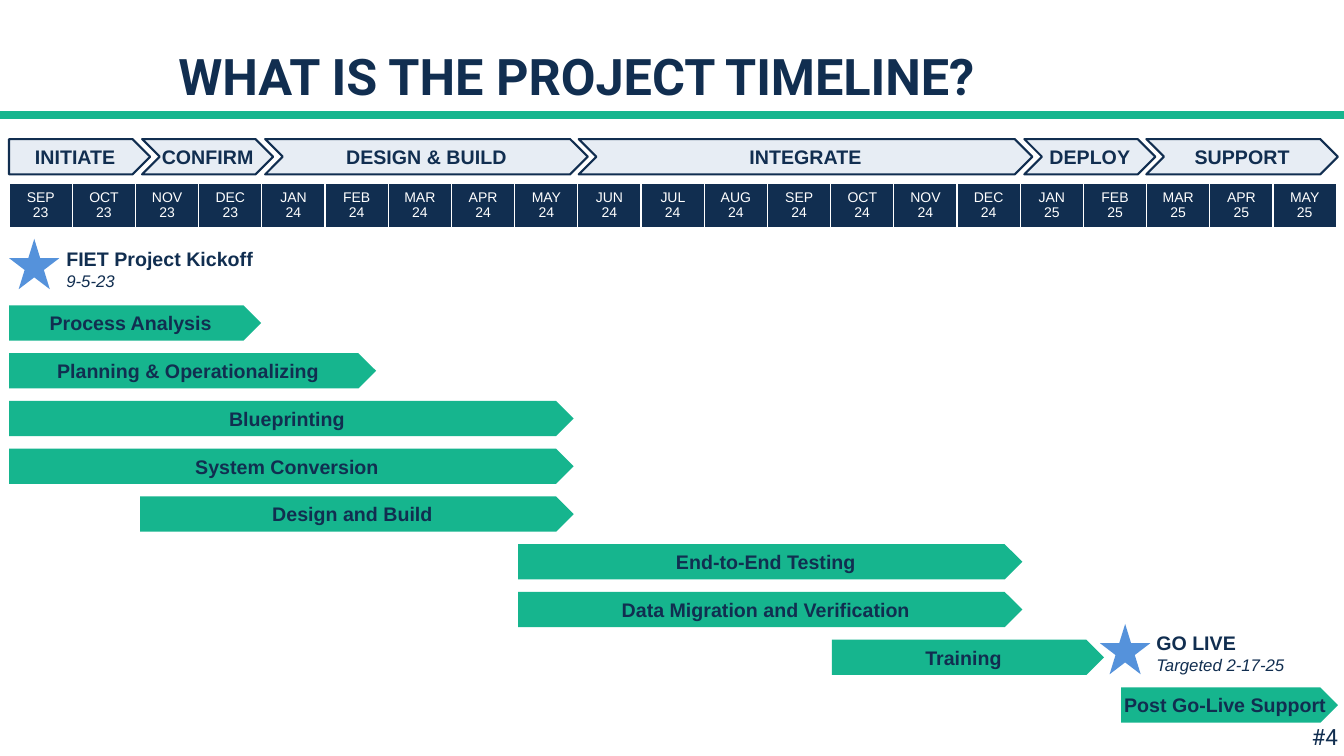
from lxml import etree
from pptx import Presentation
from pptx import util as u
from pptx.dml.color import RGBColor
from pptx.enum import shapes, text
from pptx.oxml import ns

NAVY = RGBColor(0x11, 0x2E, 0x50)
GREEN = RGBColor(0x16, 0xB5, 0x8E)
BLUE = RGBColor(0x55, 0x92, 0xDB)
PALE = RGBColor(0xE7, 0xED, 0xF4)
WHITE = RGBColor(0xFF, 0xFF, 0xFF)

SHAPE = shapes.MSO_SHAPE
ALIGN = text.PP_ALIGN
ANCHOR = text.MSO_ANCHOR

LEFT = 0.09
BAR_H = 0.35
PHASE_TOP = 1.38
TASK_TOP, TASK_PITCH = 3.03, 3.79 / 8
MONTH_W, MONTH_H = 0.63, 0.43

PHASES = [  # name, left, width
    ("INITIATE", LEFT, 1.4),
    ("CONFIRM", 1.41, 1.3),
    ("DESIGN & BUILD", 2.63, 3.2),
    ("INTEGRATE", 5.74, 4.5),
    ("DEPLOY", 10.16, 1.3),
    ("SUPPORT", 11.37, 1.9),
]
TASKS = [  # name, left, width
    ("Process Analysis", LEFT, 2.5),
    ("Planning & Operationalizing", LEFT, 3.64),
    ("Blueprinting", LEFT, 5.6),
    ("System Conversion", LEFT, 5.6),
    ("Design and Build", 1.39, 4.3),
    ("End-to-End Testing", 5.14, 5),
    ("Data Migration and Verification", 5.14, 5),
    ("Training", 8.25, 2.7),
    ("Post Go-Live Support", 11.12, 2.15),
]
MONTH_NAMES = "JAN FEB MAR APR MAY JUN JUL AUG SEP OCT NOV DEC".split()
FIRST_MONTH, MONTH_COUNT = 8, 21
MONTHS = [f"{MONTH_NAMES[m % 12]} {23 + m // 12}"
          for m in range(FIRST_MONTH, FIRST_MONTH + MONTH_COUNT)]


class Timeline:
    def __init__(self, slide, font="Arial", heading_font="Roboto"):
        self.s = slide
        self.font = font
        self.heading_font = heading_font

    def format(self, p, size, color=NAVY, bold=False, italic=False, font=None, align=ALIGN.CENTER):
        p.alignment = align
        for r in p.runs:
            f = r.font
            f.name, f.size = font or self.font, u.Pt(size)
            f.bold, f.italic = bold, italic
            f.color.rgb = color

    def shape(self, kind, x, y, w, h, fill, outline=None):
        sp = self.s.shapes.add_shape(kind, u.Inches(x), u.Inches(y), u.Inches(w), u.Inches(h))
        sp.shadow.inherit = False
        sp.fill.solid()
        sp.fill.fore_color.rgb = fill
        if outline is None:
            sp.line.fill.background()
        else:
            sp.line.color.rgb = outline
            sp.line.width = u.Pt(1.5)
        return sp

    def arrow(self, kind, label, x, y, w, fill, outline=None):
        tf = self.shape(kind, x, y, w, BAR_H, fill, outline).text_frame
        tf.text = label
        tf.word_wrap = False
        tf.vertical_anchor = ANCHOR.MIDDLE
        self.format(tf.paragraphs[0], 14, bold=True)

    def milestone(self, name, date, star_at, label_at, label_size):
        """Draw a caption of two lines and the star beside it."""
        tf = self.shape(SHAPE.RECTANGLE, *label_at, *label_size, WHITE).text_frame
        tf.text = f"{name}\n{date}"
        tf.word_wrap = True
        tf.vertical_anchor = ANCHOR.MIDDLE
        title, subtitle = tf.paragraphs
        self.format(title, 14, bold=True, align=ALIGN.LEFT)
        self.format(subtitle, 12, italic=True, align=ALIGN.LEFT)
        self.shape(SHAPE.STAR_5_POINT, *star_at, 0.5, 0.5, BLUE)

    def textbox(self, label, x, y, w, h, size, bold=False, align=ALIGN.CENTER, anchor=ANCHOR.TOP):
        sp = self.s.shapes.add_textbox(u.Inches(x), u.Inches(y), u.Inches(w), u.Inches(h))
        tf = sp.text_frame
        tf.text = label
        tf.word_wrap = True
        tf.vertical_anchor = anchor
        p = tf.paragraphs[0]
        self.format(p, size, bold=bold, font=self.heading_font, align=align)
        return p

    def rule(self, y, width):
        line = self.s.shapes.add_connector(
            shapes.MSO_CONNECTOR.STRAIGHT, 0, u.Inches(y), u.Inches(width), u.Inches(y))
        line.line.color.rgb = GREEN
        line.line.width = u.Pt(6)
        etree.SubElement(line._element.spPr, ns.qn("a:effectLst"))

    def month_row(self, months, x, y):
        table = self.s.shapes.add_table(
            1, len(months), u.Inches(x), u.Inches(y),
            u.Inches(MONTH_W * len(months)), u.Inches(MONTH_H)).table
        table.first_row = table.horz_banding = False
        for column, cell, month in zip(table.columns, table.rows[0].cells, months):
            column.width = u.Inches(13.17 / len(months))
            cell.text = month
            cell.vertical_anchor = ANCHOR.MIDDLE
            self.format(cell.text_frame.paragraphs[0], 10, WHITE)
            self.cell_borders(cell)
            cell.fill.solid()
            cell.fill.fore_color.rgb = NAVY

    def cell_borders(self, cell):
        tc_pr = cell._tc.get_or_add_tcPr()
        for side in ("lnL", "lnR", "lnT"):
            ln = etree.SubElement(tc_pr, ns.qn(f"a:{side}"), w=str(u.Pt(1)))
            fill = etree.SubElement(ln, ns.qn("a:solidFill"))
            etree.SubElement(fill, ns.qn("a:srgbClr"), val=str(WHITE))


def main():
    prs = Presentation()
    prs.slide_width, prs.slide_height = u.Inches(13.33), u.Inches(7.5)
    timeline = Timeline(prs.slides.add_slide(prs.slide_layouts[6]))

    timeline.rule(1.14, 13.33)
    title = timeline.textbox("WHAT IS THE PROJECT TIMELINE?", 1.67, 0.35, 10, 0.76, 36,
                             bold=True, align=ALIGN.LEFT, anchor=ANCHOR.BOTTOM)
    title.line_spacing = 0.9

    timeline.milestone("FIET Project Kickoff", "9-5-23", (LEFT, 2.37), (0.56, 2.4), (2.2, 0.53))
    timeline.milestone("GO LIVE", "Targeted 2-17-25", (10.91, 6.19), (11.37, 6.23), (1.7, 0.5))

    for i, (name, x, w) in enumerate(PHASES):
        kind = SHAPE.CHEVRON if i else SHAPE.PENTAGON
        timeline.arrow(kind, name, x, PHASE_TOP, w, PALE, NAVY)
    for i, (name, x, w) in enumerate(TASKS):
        timeline.arrow(SHAPE.PENTAGON, name, x, TASK_TOP + i * TASK_PITCH, w, GREEN)

    timeline.month_row(MONTHS, LEFT, 1.82)
    timeline.textbox("#4", 12.84, 7.12, 0.6, 0.37, 16)

    prs.save("out.pptx")


if __name__ == "__main__":
    main()
